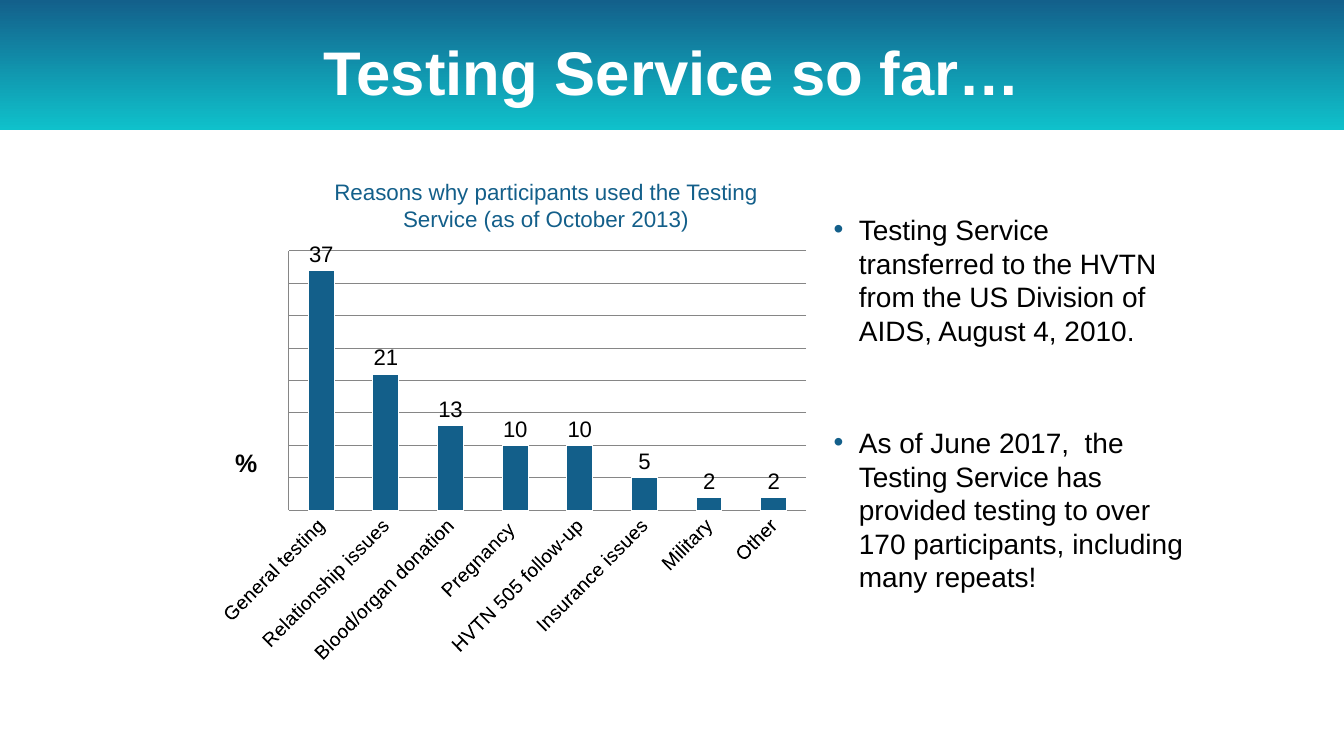
import pptx
import pptx.chart.data
import pptx.dml.color
import pptx.enum.chart
import pptx.enum.shapes
import pptx.enum.text
import pptx.oxml
import pptx.oxml.ns
import pptx.util

WIDTH, HEIGHT = 13.33, 7.5
FONT = "Arial"
COLORS = {
    "band_top": "13608B",
    "band_bottom": "0FC1CB",
    "accent": "135F8A",
    "text": "000000",
    "white": "FFFFFF",
    "grid": "868686",
}
REASONS = {
    "General testing": 37,
    "Relationship issues": 21,
    "Blood/organ donation": 13,
    "Pregnancy ": 10,
    "HVTN 505 follow-up": 10,
    "Insurance issues": 5,
    "Military": 2,
    "Other": 2,
}
FACTS = [
    "Testing Service transferred to the HVTN from the US Division of AIDS, August 4, 2010.",
    "As of June 2017,  the Testing Service has provided testing to over 170 participants, "
    "including many repeats!",
]


def rgb(name):
    return pptx.dml.color.RGBColor.from_string(COLORS[name])


def inches(box):
    return [pptx.util.Inches(length) for length in box]


def style_font(font, size, color, bold=False):
    font.name = FONT
    font.size = pptx.util.Pt(size)
    font.bold = bold
    font.color.rgb = rgb(color)


def add_text_frame(slide, box):
    frame = slide.shapes.add_textbox(*inches(box)).text_frame
    frame.word_wrap = True
    return frame


def add_run(paragraph, text, size, color, bold=False):
    run = paragraph.add_run()
    run.text = text
    style_font(run.font, size, color, bold)


def add_centred_text(slide, box, text, size, color, bold=False):
    frame = add_text_frame(slide, box)
    paragraph = frame.paragraphs[0]
    paragraph.alignment = pptx.enum.text.PP_ALIGN.CENTER
    add_run(paragraph, text, size, color, bold)
    return frame


def add_header(slide, box):
    left, top, width, height = box
    band = slide.shapes.add_shape(pptx.enum.shapes.MSO_SHAPE.RECTANGLE, *inches(box))
    band.shadow.inherit = False
    band.line.fill.background()
    band.fill.gradient()
    band.fill.gradient_angle = 270
    for stop, color in zip(band.fill.gradient_stops, ("band_top", "band_bottom")):
        stop.color.rgb = rgb(color)
    frame = add_centred_text(slide, (left + 2.17, top + 0.12, 9, height - 0.04),
                             "Testing Service so far…", 44, "white", True)
    frame.vertical_anchor = pptx.enum.text.MSO_ANCHOR.MIDDLE
    frame.paragraphs[0].line_spacing = 0.9


def set_layout(parent, position, **shares):
    """Fix a chart part at the given shares of the chart's size."""
    for old in parent.findall(pptx.oxml.ns.qn("c:layout")):
        parent.remove(old)
    target = '<c:layoutTarget val="inner"/>' if "w" in shares else ""
    modes = "".join(f'<c:{key}Mode val="edge"/>' for key in "xy")
    values = "".join(f'<c:{key} val="{share}"/>' for key, share in shares.items())
    parent.insert(position, pptx.oxml.parse_xml(
        f'<c:layout {pptx.oxml.ns.nsdecls("c")}><c:manualLayout>'
        f'{target}{modes}{values}</c:manualLayout></c:layout>'))


def style_category_axis(axis):
    axis.major_tick_mark = pptx.enum.chart.XL_TICK_MARK.NONE
    style_font(axis.tick_labels.font, 14, "text")
    axis.format.line.color.rgb = rgb("grid")
    body = axis._element.find(".//" + pptx.oxml.ns.qn("a:bodyPr"))
    body.set("rot", "-2700000")
    body.set("vert", "horz")


def style_value_axis(axis):
    axis.minimum_scale, axis.maximum_scale, axis.major_unit = 0, 40, 5
    axis.major_tick_mark = pptx.enum.chart.XL_TICK_MARK.NONE
    axis.tick_label_position = pptx.enum.chart.XL_TICK_LABEL_POSITION.NONE
    axis.format.line.color.rgb = rgb("grid")
    axis.major_gridlines.format.line.color.rgb = rgb("grid")
    frame = axis.axis_title.text_frame
    add_run(frame.paragraphs[0], "%", 18, "text", True)
    body = frame._txBody.find(pptx.oxml.ns.qn("a:bodyPr"))
    body.set("rot", "0")
    body.set("vert", "horz")
    set_layout(axis.axis_title._element, 1, x=0.01, y=0.48)


def add_reasons_chart(slide, box):
    data = pptx.chart.data.CategoryChartData()
    data.categories = list(REASONS)
    data.add_series("Series 1", list(REASONS.values()))
    chart = slide.shapes.add_chart(
        pptx.enum.chart.XL_CHART_TYPE.COLUMN_CLUSTERED, *inches(box), data).chart
    chart.has_legend = False
    chart.has_title = False
    style_font(chart.font, 18, "text")
    style_category_axis(chart.category_axis)
    style_value_axis(chart.value_axis)

    plot = chart.plots[0]
    plot.gap_width = 150
    plot.vary_by_categories = False
    bars = plot.series[0]
    bars.format.fill.solid()
    bars.format.fill.fore_color.rgb = rgb("accent")
    bars.format.line.color.rgb = rgb("white")
    labels = bars.data_labels
    labels.show_value = True
    labels.position = pptx.enum.chart.XL_LABEL_POSITION.OUTSIDE_END
    style_font(labels.font, 16, "text")
    plot_area = chart._chartSpace.find(".//" + pptx.oxml.ns.qn("c:plotArea"))
    set_layout(plot_area, 0, x=0.11, y=0.12, w=0.89, h=0.49)

    left, top, width, height = box
    add_centred_text(slide, (left + 0.66, top - 0.14, width - 0.66, 0.94),
                     "Reasons why participants used the Testing Service (as of October 2013)",
                     16, "accent")


def add_bullet(paragraph, indent):
    properties = paragraph._p.get_or_add_pPr()
    properties.set("marL", str(pptx.util.Inches(indent)))
    properties.set("indent", str(-pptx.util.Inches(indent)))
    namespace = pptx.oxml.ns.nsdecls("a")
    for xml in (
        f'<a:buClr {namespace}><a:srgbClr val="{COLORS["accent"]}"/></a:buClr>',
        f'<a:buFont {namespace} typeface="{FONT}"/>',
        f'<a:buChar {namespace} char="•"/>',
    ):
        properties.append(pptx.oxml.parse_xml(xml))


def add_facts(slide, box):
    frame = add_text_frame(slide, box)
    for index, fact in enumerate(FACTS):
        paragraph = frame.add_paragraph() if index else frame.paragraphs[0]
        add_bullet(paragraph, 0.25)
        paragraph.line_spacing = pptx.util.Pt(24)
        paragraph.space_before = pptx.util.Pt(50 if index else 0)
        paragraph.space_after = pptx.util.Pt(6)
        add_run(paragraph, fact, 20, "text")


def main():
    presentation = pptx.Presentation()
    presentation.slide_width = pptx.util.Inches(WIDTH)
    presentation.slide_height = pptx.util.Inches(HEIGHT)
    slide = presentation.slides.add_slide(presentation.slide_layouts[6])
    add_header(slide, (0, 0, WIDTH, 1.29))
    add_facts(slide, (8.17, 2.06, 3.67, 4.17))
    add_reasons_chart(slide, (2.17, 1.86, 5.83, 5.25))
    presentation.save("out.pptx")


if __name__ == "__main__":
    main()
